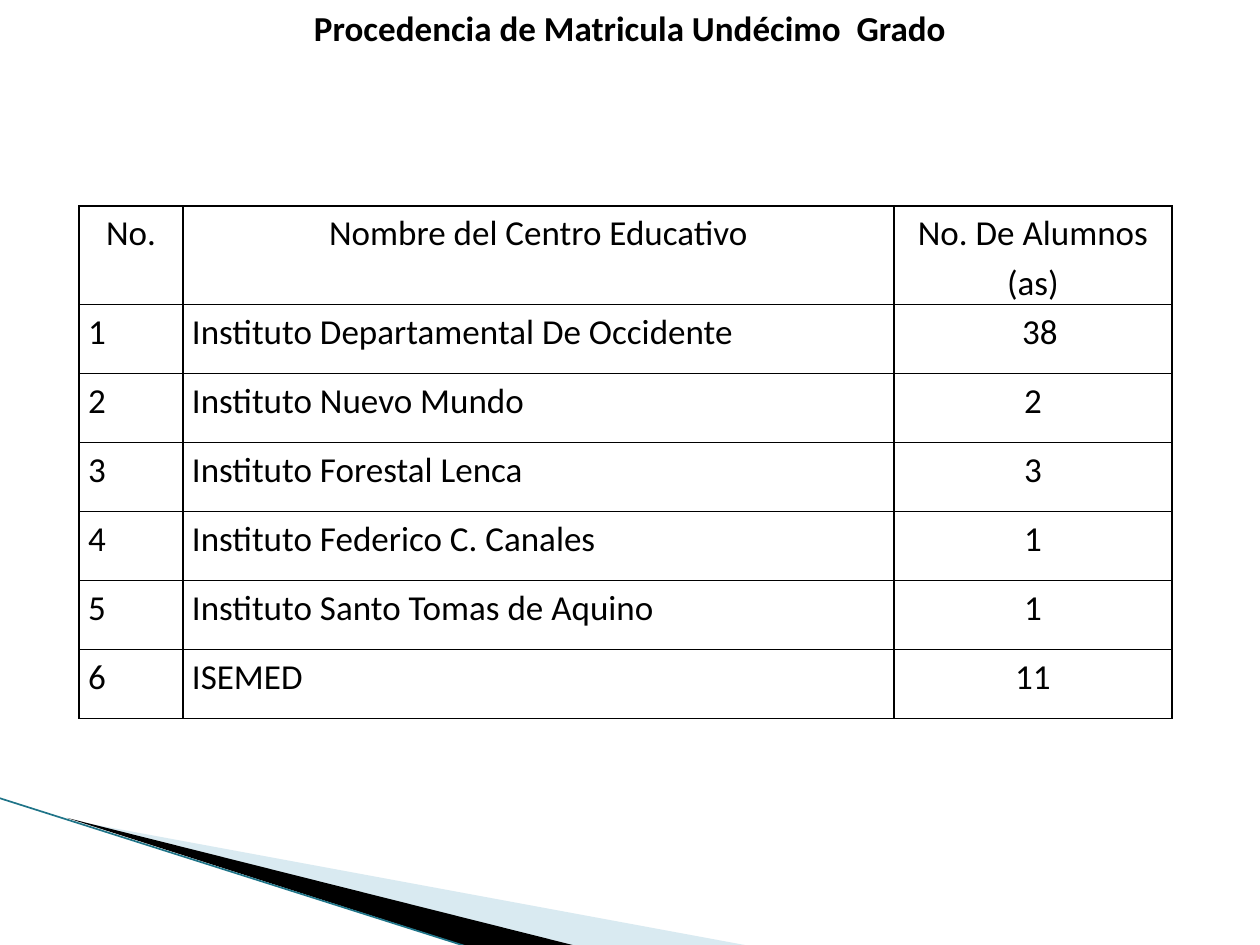
from dataclasses import dataclass

from lxml import etree
from pptx import Presentation
from pptx import util as u
from pptx.dml.color import RGBColor
from pptx.enum import shapes, text
from pptx.oxml import parse_xml
from pptx.oxml.ns import nsdecls, qn

PX = u.Inches(1) // 126
CENTER, LEFT = text.PP_ALIGN.CENTER, text.PP_ALIGN.LEFT


@dataclass(frozen=True)
class Theme:
    font: str = "Calibri"
    size: int = 20
    ink: str = "000000"
    pale: str = "A0CBDC"
    pale_opacity: int = 40
    teal: str = "1F7488"
    rule: float = 0.95
    border: float = 1


THEME = Theme()
HEADER = ("No.", "Nombre del Centro Educativo", "No. De Alumnos (as)")
SCHOOLS = (
    ("Instituto Departamental De Occidente", 38),
    ("Instituto Nuevo Mundo", 2),
    ("Instituto Forestal Lenca", 3),
    ("Instituto Federico C. Canales", 1),
    ("Instituto Santo Tomas de Aquino", 1),
    ("ISEMED", 11),
)
COLUMNS = (104, 711, 278)
ALIGNMENTS = (LEFT, LEFT, CENTER)
ROW_HEIGHT = 69
CELL_MARGIN = 9


def assign(target, **values):
    for name, value in values.items():
        setattr(target, name, value)


def write(paragraph, words, alignment, spacing=1.0, bold=False):
    paragraph.text = words
    assign(paragraph, alignment=alignment, line_spacing=spacing)
    font = paragraph.runs[0].font
    assign(font, name=THEME.font, size=u.Pt(THEME.size), bold=bold)
    font.color.rgb = RGBColor.from_string(THEME.ink)


def set_frame(shape, left, top, width, height):
    """Give a freeform another frame while its outline stays in place."""
    shift_x, shift_y = shape.left // PX - left, shape.top // PX - top
    outline = next(shape._element.iter(qn("a:path")))
    for point in outline.iter(qn("a:pt")):
        point.set("x", str(int(point.get("x")) + shift_x))
        point.set("y", str(int(point.get("y")) + shift_y))
    outline.set("w", str(width))
    outline.set("h", str(height))
    assign(shape, left=left * PX, top=top * PX,
           width=width * PX, height=height * PX)


def add_wedge(slide, left, top, points, frame, color, opacity=100):
    """Draw a filled polygon; points and frame are relative to left and top."""
    corners = [(left + x, top + y) for x, y in points]
    builder = slide.shapes.build_freeform(*corners[0], scale=PX)
    builder.add_line_segments(corners[1:], close=True)
    shape = builder.convert_to_shape()
    frame_left, frame_top, width, height = frame
    set_frame(shape, left + frame_left, top + frame_top, width, height)
    shape.shadow.inherit = False
    shape.line.fill.background()
    shape.fill.solid()
    shape.fill.fore_color.rgb = RGBColor.from_string(color)
    if opacity < 100:
        fill_color = shape.fill._xPr.find(qn("a:solidFill"))[0]
        etree.SubElement(fill_color, qn("a:alpha"), val=str(opacity * 1000))


def add_corner_decoration(slide, left, top):
    add_wedge(slide, left, top, ((69, 23), (750, 149), (575, 149)),
              (98, -108, 524, 199), THEME.pale, THEME.pale_opacity)
    add_wedge(slide, left, top, ((67, 21), (576, 149), (469, 150)),
              (-8, 1, 524, 116), THEME.ink)
    ends = (left - 1, top + 1, left + 468, top + 150)
    line = slide.shapes.add_connector(shapes.MSO_CONNECTOR.STRAIGHT,
                                      *(value * PX for value in ends))
    line.line.color.rgb = RGBColor.from_string(THEME.teal)
    line.line.width = u.Pt(THEME.rule)
    etree.SubElement(line._element.spPr, qn("a:effectLst"))


def add_title(slide, left, top, width, height):
    title = slide.shapes.title
    assign(title, left=left * PX, top=top * PX,
           width=width * PX, height=height * PX)
    assign(title.text_frame, word_wrap=True, auto_size=text.MSO_AUTO_SIZE.NONE,
           vertical_anchor=text.MSO_ANCHOR.MIDDLE)
    write(title.text_frame.paragraphs[0],
          "Procedencia de Matricula Undécimo  Grado", CENTER, bold=True)


def format_cell(cell):
    assign(cell, margin_left=CELL_MARGIN * PX, margin_right=CELL_MARGIN * PX,
           margin_top=0, margin_bottom=0)
    properties = cell._tc.get_or_add_tcPr()
    for side in "LRTB":
        properties.append(parse_xml(
            f'<a:ln{side} {nsdecls("a")} w="{u.Pt(THEME.border)}"><a:solidFill>'
            f'<a:srgbClr val="{THEME.ink}"/></a:solidFill></a:ln{side}>'))
    cell.fill.background()


def add_enrolment_table(slide, left, top):
    rows = [HEADER] + [(str(number), name, str(pupils))
                       for number, (name, pupils) in enumerate(SCHOOLS, 1)]
    frame = slide.shapes.add_table(
        len(rows), len(COLUMNS), left * PX, top * PX,
        sum(COLUMNS) * PX, len(rows) * ROW_HEIGHT * PX)
    table = frame.table
    assign(table, first_row=False, horz_banding=False)
    for column, width in zip(table.columns, COLUMNS):
        column.width = width * PX
    for row_index, row in enumerate(rows):
        table.rows[row_index].height = ROW_HEIGHT * PX
        for column_index, words in enumerate(row):
            cell = table.cell(row_index, column_index)
            format_cell(cell)
            alignment = ALIGNMENTS[column_index] if row_index else CENTER
            write(cell.text_frame.paragraphs[0], words, alignment, 1.15)
    # The first school's count sits a little right of the centre.
    table.cell(1, 2).margin_left = (CELL_MARGIN + 14) * PX


def main():
    presentation = Presentation()
    assign(presentation, slide_width=1260 * PX, slide_height=945 * PX)
    slide = presentation.slides.add_slide(presentation.slide_layouts[5])
    add_corner_decoration(slide, 0, 797)
    add_title(slide, 0, 0, 1260, 55)
    add_enrolment_table(slide, 79, 206)
    presentation.save("out.pptx")


if __name__ == "__main__":
    main()
